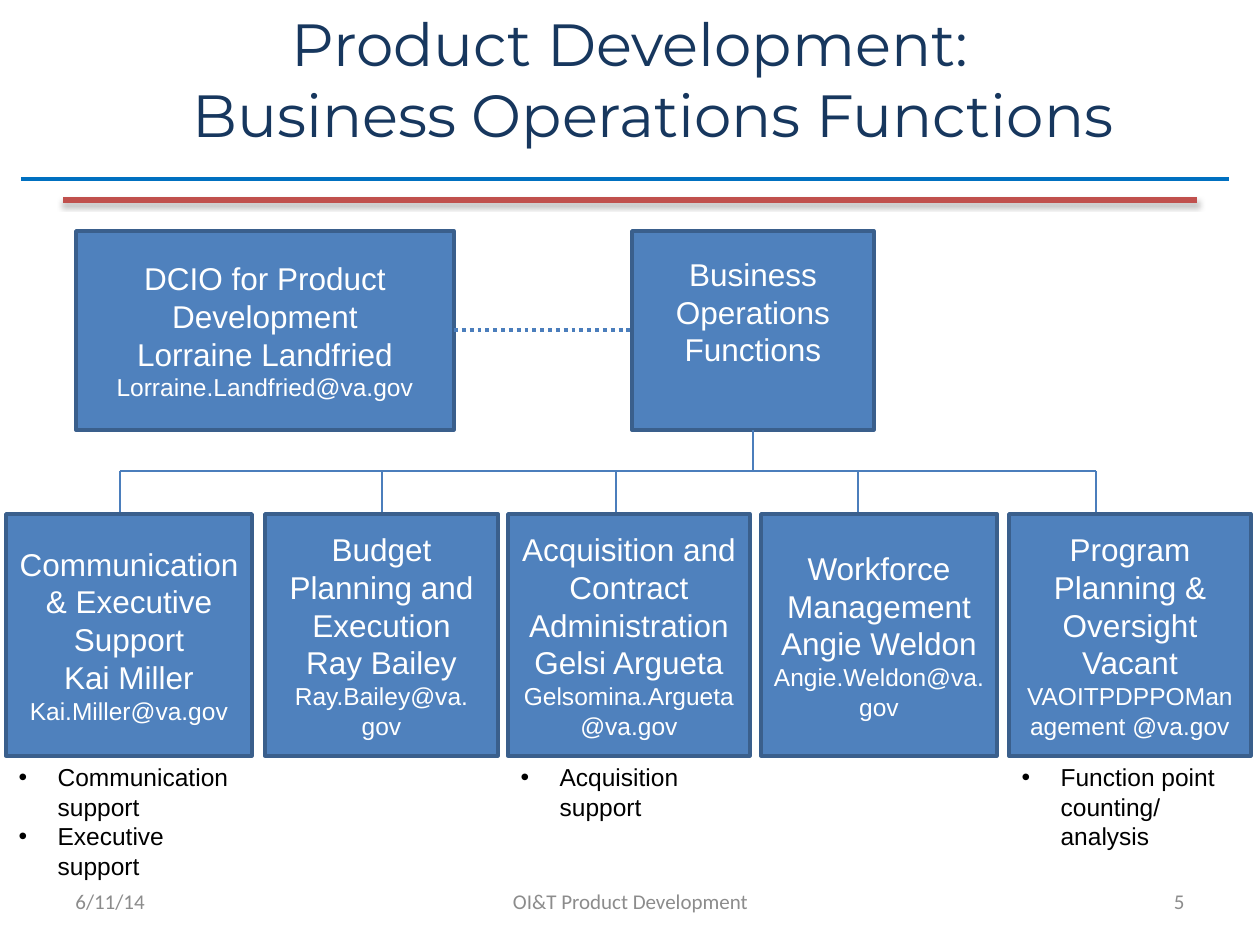
from lxml.etree import SubElement
from pptx import Presentation
from pptx.dml.color import RGBColor
from pptx.enum.dml import MSO_LINE
from pptx.enum.shapes import MSO_CONNECTOR, MSO_SHAPE
from pptx.enum.text import MSO_ANCHOR, MSO_AUTO_SIZE, PP_ALIGN
from pptx.oxml.ns import qn
from pptx.util import Emu, Pt

NAVY = RGBColor(0x17, 0x37, 0x5E)
BLUE = RGBColor(0x00, 0x70, 0xC0)
RED = RGBColor(0xC0, 0x50, 0x4D)
BOX_FILL = RGBColor(0x4F, 0x81, 0xBD)
BOX_EDGE = RGBColor(0x3A, 0x5F, 0x8C)
LINK = RGBColor(0x4B, 0x7E, 0xBC)
GREY = RGBColor(0x8C, 0x8C, 0x8C)
WHITE = RGBColor(0xFF, 0xFF, 0xFF)
BLACK = RGBColor(0x00, 0x00, 0x00)

# Content: positions in px, 126 px to the inch
TITLE = ["Product Development:", "Business Operations Functions"]
TITLE_INDENT = 46  # second line sits a little right of centre
HEAD_TOP, HEAD_HEIGHT = 231, 199
LEAD = dict(left=76, width=378, lines=["DCIO for Product Development", "Lorraine Landfried"],
            email=["Lorraine.Landfried@va.gov"])
FUNCTIONS = dict(left=632, width=242, lines=["Business Operations Functions"], email=[])
BRANCH_TOP, BRANCH_HEIGHT, BUS_Y = 514, 242, 471
BRANCHES = [
    dict(left=6, width=246, drop=120, email=["Kai.Miller@va.gov"],
         lines=["Communication & Executive Support", "Kai Miller"],
         duties=["Communication support", "Executive support"]),
    dict(left=265, width=233, drop=382, email=["Ray.Bailey@va.", "gov"],
         lines=["Budget Planning and Execution", "Ray Bailey"], duties=[]),
    dict(left=508, width=242, drop=616, email=["Gelsomina.Argueta@va.gov"],
         lines=["Acquisition and Contract Administration", "Gelsi Argueta"],
         duties=["Acquisition support"]),
    dict(left=761, width=236, drop=858, email=["Angie.Weldon@va.gov"],
         lines=["Workforce Management", "Angie Weldon"], duties=[]),
    dict(left=1009, width=242, drop=1096, email=["VAOITPDPPOManagement @va.gov"],
         lines=["Program Planning & Oversight", "Vacant"],
         duties=["Function point counting/ analysis"]),
]
DUTY_LINE, DUTY_INDENT = 30, 39
FOOTER_TOP, FOOTER_HEIGHT = 876, 50
FOOTERS = [
    ("6/11/14", 63, 294, PP_ALIGN.LEFT),
    ("OI&T Product Development", 431, 399, PP_ALIGN.CENTER),
    ("5", 903, 294, PP_ALIGN.RIGHT),
]


def px(value):
    return Emu(round(value * 914400 / 126))


def place(shape, left, top, width, height):
    box = dict(left=left, top=top, width=width, height=height)
    for side, value in box.items():
        setattr(shape, side, px(value))


def write(shape, lines, font, color, align, anchor, bullet=False):
    """Fill a shape with (text, size) lines."""
    frame = shape.text_frame
    settings = dict(word_wrap=True, auto_size=MSO_AUTO_SIZE.NONE, vertical_anchor=anchor)
    for name, value in settings.items():
        setattr(frame, name, value)
    for i, (text, size) in enumerate(lines):
        paragraph = frame.paragraphs[0] if i == 0 else frame.add_paragraph()
        paragraph.alignment = align
        paragraph.space_before = Pt(0)
        if bullet:
            props = paragraph._p.get_or_add_pPr()
            props.set("marL", str(px(DUTY_INDENT)))
            props.set("indent", str(-px(DUTY_INDENT)))
            SubElement(props, qn("a:buFont"), typeface="Arial")
            SubElement(props, qn("a:buChar"), char="•")
        run = paragraph.add_run()
        run.text = text
        for name, value in dict(name=font, size=Pt(size), bold=False).items():
            setattr(run.font, name, value)
        run.font.color.rgb = color


def add_line(x1, y1, x2, y2, color=LINK, weight=0.75, dash=None):
    """Draw a straight line and return its empty effect list."""
    line = slide.shapes.add_connector(MSO_CONNECTOR.STRAIGHT, px(x1), px(y1), px(x2), px(y2))
    line.line.color.rgb = color
    line.line.width = Pt(weight)
    if dash:
        line.line.dash_style = dash
    return SubElement(line._element.spPr, qn("a:effectLst"))


def add_box(unit, top, height):
    box = slide.shapes.add_shape(MSO_SHAPE.RECTANGLE, 0, 0, 0, 0)
    place(box, unit["left"], top, unit["width"], height)
    box.shadow.inherit = False
    box.fill.solid()
    box.fill.fore_color.rgb = BOX_FILL
    box.line.color.rgb = BOX_EDGE
    box.line.width = Pt(2)
    lines = [(text, 18) for text in unit["lines"]] + [(text, 14) for text in unit["email"]]
    write(box, lines, "Arial", WHITE, PP_ALIGN.CENTER, MSO_ANCHOR.MIDDLE)
    return box


presentation = Presentation()
presentation.slide_width, presentation.slide_height = px(1260), px(945)
slide = presentation.slides.add_slide(presentation.slide_layouts.get_by_name("Comparison"))
title, *bodies = slide.placeholders

# Title and the two rules below it
place(title, 63, 0, 1134, 157)
write(title, [(text, 34) for text in TITLE], "Montserrat", NAVY,
      PP_ALIGN.CENTER, MSO_ANCHOR.MIDDLE)
title.text_frame.paragraphs[1]._p.get_or_add_pPr().set("marL", str(px(TITLE_INDENT)))
add_line(21, 179, 1229, 179, BLUE, 2)
effects = add_line(63, 200, 1197, 200, RED, 3)
shadow = SubElement(effects, qn("a:outerShdw"), blurRad=str(Pt(3.1)), dist=str(Pt(1.8)),
                    dir="5400000", rotWithShape="0")
shadow_color = SubElement(shadow, qn("a:srgbClr"), val="000000")
SubElement(shadow_color, qn("a:alpha"), val="35000")

# Top row and its dotted link
add_box(LEAD, HEAD_TOP, HEAD_HEIGHT)
functions_box = add_box(FUNCTIONS, HEAD_TOP, HEAD_HEIGHT)
functions_box.text_frame.margin_bottom = px(44)
add_line(LEAD["left"] + LEAD["width"], 330, FUNCTIONS["left"], 330, LINK, 2.25,
         MSO_LINE.ROUND_DOT)

# Tree lines
stem = FUNCTIONS["left"] + FUNCTIONS["width"] / 2
add_line(stem, HEAD_TOP + HEAD_HEIGHT, stem, BUS_Y)
add_line(BRANCHES[0]["drop"], BUS_Y, BRANCHES[-1]["drop"], BUS_Y)

# Branches with their duties
spare_bodies = iter(bodies)
for branch in BRANCHES:
    add_line(branch["drop"], BUS_Y, branch["drop"], BRANCH_TOP)
    add_box(branch, BRANCH_TOP, BRANCH_HEIGHT)
    if branch["duties"]:
        duties = next(spare_bodies)
        place(duties, branch["left"], BRANCH_TOP + BRANCH_HEIGHT, branch["width"],
              12 + 4 * DUTY_LINE)
        write(duties, [(text, 14) for text in branch["duties"]], "Arial", BLACK,
              PP_ALIGN.LEFT, MSO_ANCHOR.TOP, bullet=True)
for unused in spare_bodies:
    unused._element.getparent().remove(unused._element)

# Footer
for text, left, width, align in FOOTERS:
    footer = slide.shapes.add_textbox(0, 0, 0, 0)
    place(footer, left, FOOTER_TOP, width, FOOTER_HEIGHT)
    write(footer, [(text, 12)], "Calibri", GREY, align, MSO_ANCHOR.MIDDLE)

presentation.save("out.pptx")
